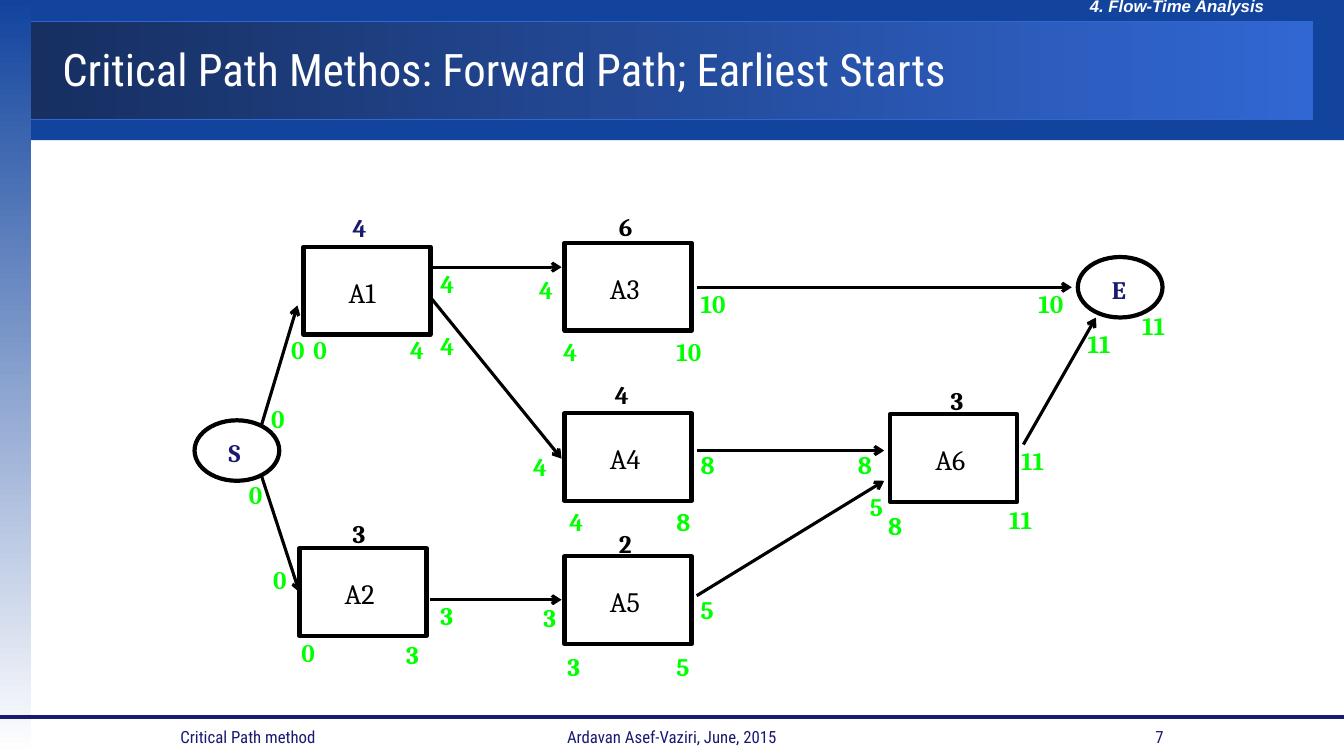
from lxml import etree
from pptx import Presentation
from pptx.dml.color import RGBColor
from pptx.enum import shapes, text
from pptx.oxml import ns
from pptx.util import Inches, Pt

COLORS = {"blue": "12449E", "dark": "172F61", "bright": "3167D3", "navy": "1A1A70",
          "white": "FFFFFF", "black": "000000", "green": "00FF00"}
RGB = {name: RGBColor.from_string(value) for name, value in COLORS.items()}
KIND = shapes.MSO_SHAPE
ALIGN = text.PP_ALIGN

deck = Presentation()
deck.slide_width, deck.slide_height = Inches(13.33), Inches(7.5)
page = deck.slides.add_slide(deck.slide_layouts[6])


def add_box(kind, left, top, width, height, fill=None, line=None, weight=3):
    """Add a preset shape; a list of two fill names makes a gradient."""
    box = page.shapes.add_shape(kind, Inches(left), Inches(top), Inches(width), Inches(height))
    box.shadow.inherit = False
    if isinstance(fill, list):
        box.fill.gradient()
        for stop, name, position in zip(box.fill.gradient_stops, fill, (0, 1)):
            stop.color.rgb, stop.position = RGB[name], position
    elif fill:
        box.fill.solid()
        box.fill.fore_color.rgb = RGB[fill]
    else:
        box.fill.background()
    if line:
        box.line.color.rgb, box.line.width = RGB[line], Pt(weight)
    else:
        box.line.fill.background()
    return box


def add_label(words, left, top, width=0.34, height=0.4, size=18, color="green",
              font="Cambria", bold=True, align=ALIGN.LEFT, wrap=True, middle=False):
    """Add a one-line text box and return its run."""
    box = page.shapes.add_textbox(Inches(left), Inches(top), Inches(width), Inches(height))
    frame = box.text_frame
    frame.text = words
    frame.word_wrap = wrap
    frame.vertical_anchor = text.MSO_ANCHOR.MIDDLE if middle else text.MSO_ANCHOR.TOP
    para = frame.paragraphs[0]
    para.alignment = align
    span = para.runs[0]
    span.font.size, span.font.name, span.font.bold = Pt(size), font, bold
    span.font.color.rgb = RGB[color]
    return span


# Header bands and side strip
add_box(KIND.RECTANGLE, 0.26, 0, 13.07, 1.39, "blue")
title_band = add_box(KIND.RECTANGLE, 0.26, 0.21, 12.76, 0.98, ["dark", "bright"], "bright", 0.75)
title_band.fill.gradient_angle = 0
side_strip = add_box(KIND.RECTANGLE, 0, 0, 0.31, 7.5, ["blue", "white"])
side_strip.fill.gradient_angle = 270
chapter = add_label("4. Flow-Time Analysis", 10.71, -0.09, 2.78, 0.3, 12, "white", "Arial")
chapter.font.italic = True
add_label("Critical Path Methos: Forward Path; Earliest Starts", 0.52, 0.21, 12.39, 0.94,
          32, "white", "Roboto Condensed", False, middle=True)

# Activity boxes with their names
activities = {"A1": (3.01, 2.45), "A3": (5.6, 2.41), "A4": (5.6, 4.1),
              "A6": (8.83, 4.11), "A5": (5.6, 5.52), "A2": (2.97, 5.44)}
nodes = {}
for name, (left, top) in activities.items():
    nodes[name] = add_box(KIND.RECTANGLE, left, top, 1.26, 0.87, line="black")
    add_label(name, left + 0.35, top + 0.23, 0.56, 0.44, 20, "black", bold=False, wrap=False)

# Start and end events
for name, left, top in [("S", 1.93, 4.17), ("E", 10.69, 2.55)]:
    nodes[name] = add_box(KIND.OVAL, left, top, 0.84, 0.6, line="black")
    add_label(name, left + 0.24, top + 0.12, 0.37, color="navy", wrap=False)

# Durations above the activities
durations = [("4", 3.4, 2.06), ("3", 3.4, 5.09), ("6", 6.04, 2.05),
             ("4", 6, 3.71), ("2", 6.04, 5.19), ("3", 9.33, 3.77)]
for index, (days, left, top) in enumerate(durations):
    add_label(days, left, top, color="black" if index else "navy")

# Arrows and rule above the footer
arrows = {
    "A1-A3": (4.27, 2.65, 5.57, 2.65), "A1-A4": (4.27, 2.95, 5.57, 4.55),
    "A2-A5": (4.27, 5.95, 5.57, 5.95), "A4-A6": (6.91, 4.47, 8.77, 4.47),
    "A5-A6": (6.91, 5.91, 8.77, 4.77), "A3-E": (6.91, 2.85, 10.63, 2.85),
    "A6-E": (10.15, 4.41, 10.87, 3.15), "S-A1": (2.59, 4.23, 2.95, 3.03),
    "S-A2": (2.59, 4.71, 2.95, 5.85), "footer": (0, 7.11, 13.33, 7.11),
}
for name, ends in arrows.items():
    link = page.shapes.add_connector(shapes.MSO_CONNECTOR.STRAIGHT, *map(Inches, ends))
    is_rule = name == "footer"
    link.line.color.rgb = RGB["navy" if is_rule else "black"]
    link.line.width = Pt(3 if is_rule else 2.25)
    if not is_rule:
        etree.SubElement(link.line._get_or_add_ln(), ns.qn("a:tailEnd"), type="arrow")
    if name == "S-A2":
        link.end_connect(nodes["A2"], 1)
    etree.SubElement(link._element.spPr, ns.qn("a:effectLst"))

# Earliest times: one-digit and two-digit values, with their places
times = {
    "0": [(2.59, 3.95), (2.37, 4.71), (2.79, 3.27), (2.61, 5.55), (3.01, 3.27), (2.89, 6.27)],
    "3": [(3.93, 6.29), (4.27, 5.91), (5.29, 5.93), (5.53, 6.41)],
    "4": [(3.97, 3.27), (4.27, 3.23), (4.27, 2.61), (5.25, 2.67),
          (5.19, 4.43), (5.55, 4.97), (5.49, 3.29)],
    "5": [(6.61, 6.41), (6.85, 5.85), (8.53, 4.83)],
    "8": [(6.61, 4.97), (6.85, 4.41), (8.41, 4.41), (8.71, 5.01)],
    "10": [(6.61, 3.29), (6.85, 2.81), (10.2, 2.81)],
    "11": [(9.91, 4.95), (10.03, 4.37), (10.69, 3.21), (11.23, 3.03)],
}
for value, places in times.items():
    for left, top in places:
        add_label(value, left, top, 0.54 if len(value) == 2 else 0.34)

# Footer
for words, left, width, align in [("Critical Path method", 1.69, 2.33, ALIGN.LEFT),
                                  ("Ardavan Asef-Vaziri, June, 2015", 5.08, 3.17, ALIGN.CENTER),
                                  ("7", 9.31, 2.33, ALIGN.RIGHT)]:
    add_label(words, left, 7.11, width, 0.4, 12, "navy", "Roboto Condensed", False,
              align, middle=True)

deck.save("out.pptx")
